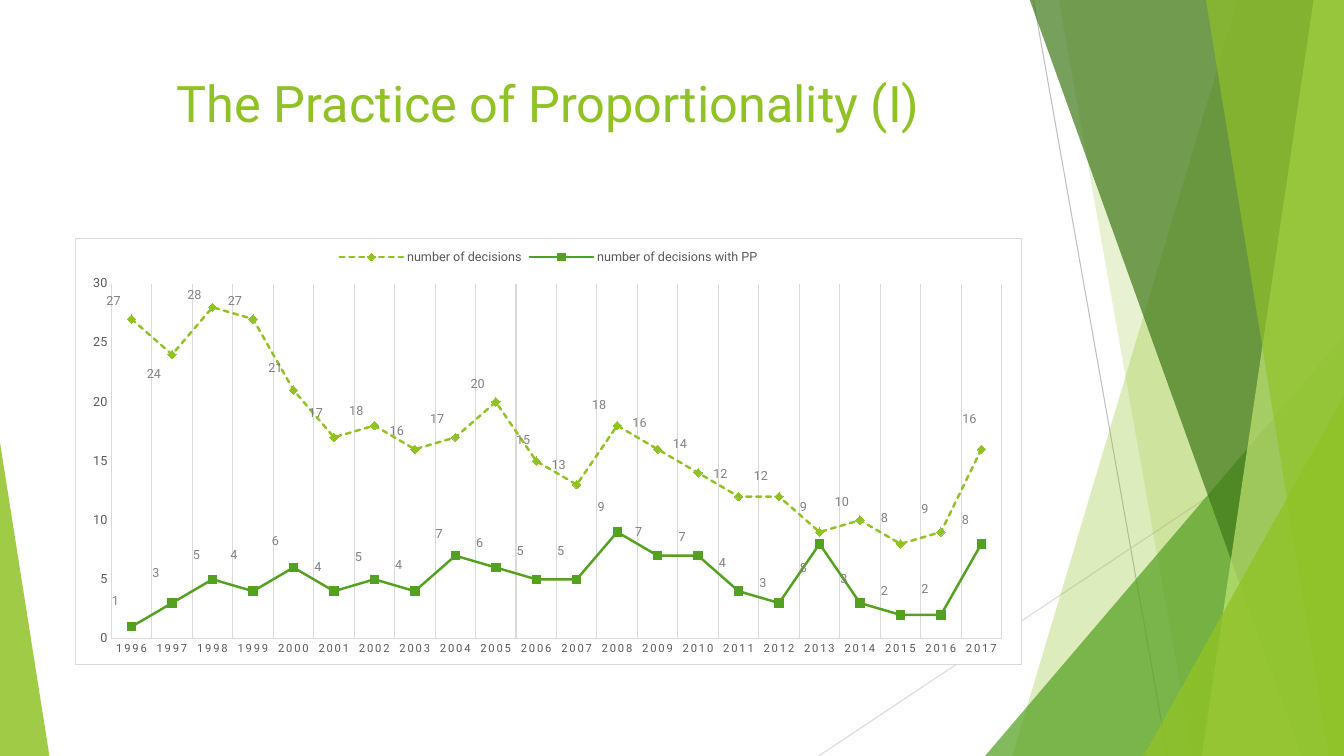
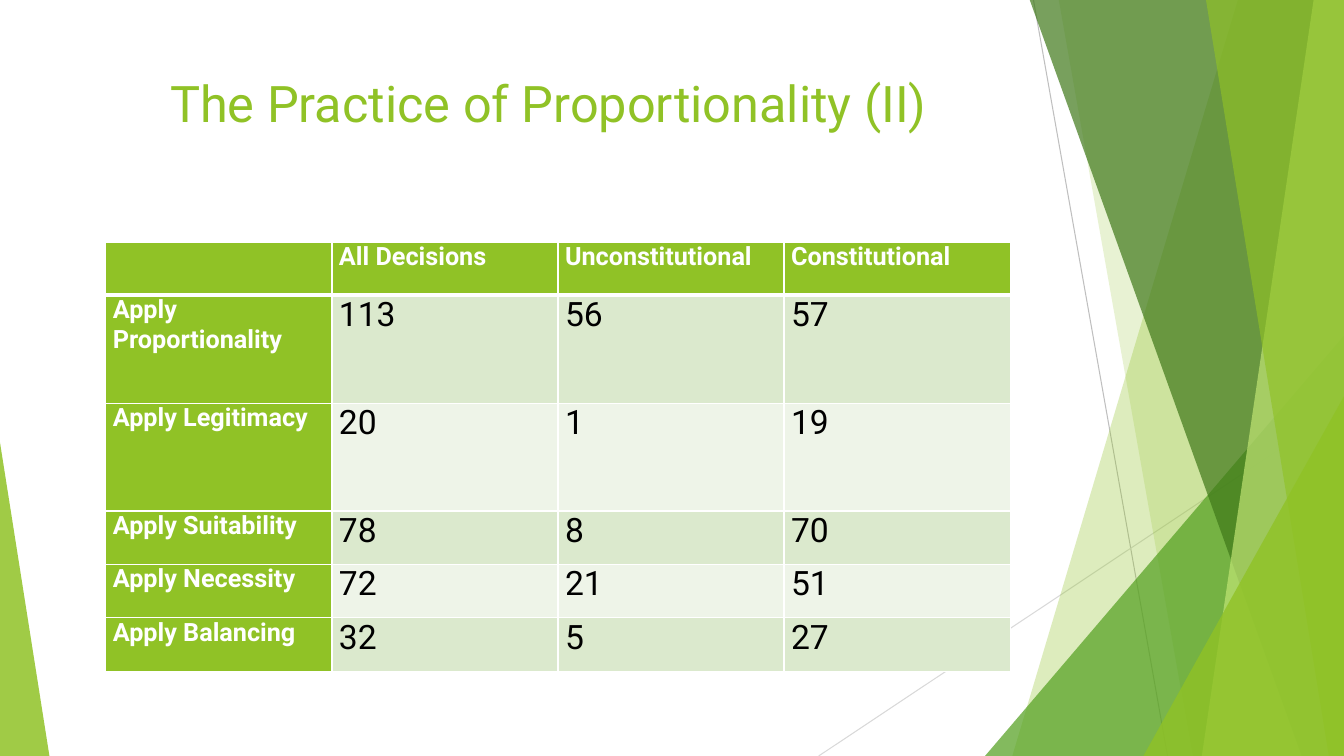
from dataclasses import dataclass
from typing import Any

from lxml.etree import SubElement
from pptx import Presentation
from pptx.chart.chart import Chart
from pptx.chart.data import CategoryChartData
from pptx.dml.color import RGBColor
from pptx.enum.chart import XL_CHART_TYPE, XL_LABEL_POSITION, XL_LEGEND_POSITION, XL_MARKER_STYLE, XL_TICK_MARK
from pptx.enum.dml import MSO_LINE
from pptx.enum.shapes import MSO_CONNECTOR, MSO_SHAPE
from pptx.enum.text import MSO_ANCHOR, MSO_AUTO_SIZE, PP_ALIGN
from pptx.oxml import parse_xml
from pptx.oxml.ns import nsdecls, qn
from pptx.util import Inches, Pt

COLORS = {
    "lime": "90C226", "green": "54A021", "forest": "3F7819", "pale_lime": "C0E474",
    "silver": "BFBFBF", "light_gray": "D9D9D9", "axis_text": "595959", "label_text": "808080",
    "white": "FFFFFF", "black": "000000", "row_tint": "DBE9CD", "row_pale": "EEF4E8",
}
FONT = "Roboto"
PAGE_WIDTH, PAGE_HEIGHT = 13.33, 7.5
TITLE_BOX = {"left": Inches(0.74), "top": Inches(0.67), "width": Inches(9.4), "height": Inches(1.44)}


@dataclass(frozen=True)
class Band:
    """Area from a slanted left edge to the right side of the page."""
    top_x: float
    bottom_x: float
    color: str
    opacity: int


@dataclass(frozen=True)
class Corner:
    """Triangle standing on the bottom of the page; apex 0 is left, 1 is right."""
    left: float
    top: float
    width: float
    apex: int
    color: str
    opacity: int


@dataclass(frozen=True)
class Ray:
    start: tuple[float, float]
    end: tuple[float, float]
    color: str


@dataclass(frozen=True)
class LineSeries:
    """Shifts lead from a point to its label; across_shifts holds the exceptions by index."""
    name: str
    values: list[int]
    color: str
    marker: XL_MARKER_STYLE
    dash: MSO_LINE
    across_shifts: dict[int, float]
    down_shifts: list[float]


RAYS = [
    Ray((10.25, 0), (11.58, PAGE_HEIGHT), "silver"),
    Ray((PAGE_WIDTH, 4.03), (8.12, PAGE_HEIGHT), "light_gray"),
]
FACETS = [
    Band(12.28, 10.04, "lime", 30),
    Band(10.5, 11.83, "lime", 20),
    Corner(9.77, 3.33, 3.56, 1, "green", 72),
    Band(10.21, 12.91, "forest", 70),
    Band(13.03, 11.92, "pale_lime", 70),
    Band(11.96, 13.18, "lime", 65),
    Corner(11.34, 3.93, 1.99, 1, "lime", 80),
    Corner(0, 4.39, 0.49, 0, "lime", 85),
]
YEARS = [str(year) for year in range(1996, 2018)]
SERIES = [
    LineSeries(
        "number of decisions",
        [27, 24, 28, 27, 21, 17, 18, 16, 17, 20, 15, 13, 18, 16, 14, 12, 12, 9, 10, 8, 9, 16],
        "lime", XL_MARKER_STYLE.DIAMOND, MSO_LINE.SQUARE_DOT, {10: -0.13, 21: -0.12},
        [-0.18, 0.2, -0.12, -0.18, -0.22, -0.24, -0.14, -0.18, -0.18, -0.18, -0.21,
         -0.19, -0.2, -0.26, -0.28, -0.22, -0.2, -0.25, -0.18, -0.25, -0.23, -0.3]),
    LineSeries(
        "number of decisions with PP",
        [1, 3, 5, 4, 6, 4, 5, 4, 7, 6, 5, 5, 9, 7, 7, 4, 3, 8, 3, 2, 2, 8],
        "green", XL_MARKER_STYLE.SQUARE, MSO_LINE.SOLID, {3: -0.19, 4: -0.18, 13: -0.19},
        [-0.25, -0.3, -0.24, -0.36, -0.26, -0.24, -0.22, -0.26, -0.21, -0.24, -0.28,
         -0.28, -0.25, -0.23, -0.18, -0.28, -0.2, 0.24, -0.24, -0.23, -0.25, -0.23]),
]
CHART_WIDTH, CHART_HEIGHT = 9.4, 4.24
TABLE_ROWS = [
    ["", "All Decisions", "Unconstitutional", "Constitutional"],
    ["Apply Proportionality", "113", "56", "57"],
    ["Apply Legitimacy", "20", "1", "19"],
    ["Apply Suitability", "78", "8", "70"],
    ["Apply Necessity", "72", "21", "51"],
    ["Apply Balancing", "32", "5", "27"],
]
ROW_HEIGHTS = [0.53, 1.07, 1.07, 0.53, 0.53, 0.53]
CELL_FORMAT = {"margin_left": Inches(0.07), "margin_right": Inches(0.07),
               "margin_top": 0, "margin_bottom": 0, "vertical_anchor": MSO_ANCHOR.TOP}


def rgb(color: str) -> RGBColor:
    return RGBColor.from_string(COLORS[color])


def apply(target: Any, values: dict[str, Any]) -> None:
    for name, value in values.items():
        setattr(target, name, value)


def format_font(font: Any, size: float, color: str, bold: bool = False) -> None:
    apply(font, {"name": FONT, "size": Pt(size), "bold": bold})
    font.color.rgb = rgb(color)


def format_line(line: Any, color: str, width: float = 0.75) -> None:
    line.color.rgb = rgb(color)
    line.width = Pt(width)


def draw_ray(shapes: Any, ray: Ray) -> None:
    line = shapes.add_connector(MSO_CONNECTOR.STRAIGHT, *(Inches(value) for value in ray.start + ray.end))
    format_line(line.line, ray.color)
    SubElement(line.element.spPr, qn("a:effectLst"))


def draw_facet(shapes: Any, facet: Band | Corner) -> None:
    if isinstance(facet, Band):
        outline = shapes.build_freeform(Inches(facet.top_x), Inches(-0.01))
        corners = [(PAGE_WIDTH, -0.01), (PAGE_WIDTH, PAGE_HEIGHT), (facet.bottom_x, PAGE_HEIGHT)]
        outline.add_line_segments([(Inches(x), Inches(y)) for x, y in corners])
        shape = outline.convert_to_shape()
    else:
        shape = shapes.add_shape(MSO_SHAPE.ISOSCELES_TRIANGLE, Inches(facet.left), Inches(facet.top),
                                 Inches(facet.width), Inches(PAGE_HEIGHT - facet.top))
        shape.adjustments[0] = facet.apex
    shape.shadow.inherit = False
    shape.line.fill.background()
    shape.fill.solid()
    shape.fill.fore_color.rgb = rgb(facet.color)
    color = shape.element.spPr.find(qn("a:solidFill"))[0]
    SubElement(color, qn("a:alpha"), val=str(facet.opacity * 1000))


def decorate_layout(layout: Any, page: Any) -> None:
    """Draw the facets on a page and move them to its layout, behind everything."""
    group = page.shapes.add_group_shape()
    for ray in RAYS:
        draw_ray(group.shapes, ray)
    for facet in FACETS:
        draw_facet(group.shapes, facet)
    layout.shapes.element.insert(2, group.element)


def add_page(deck: Any, layout: Any, title: str) -> Any:
    page = deck.slides.add_slide(layout)
    box = page.shapes.title
    apply(box, TITLE_BOX)
    apply(box.text_frame, {"vertical_anchor": MSO_ANCHOR.TOP, "word_wrap": True,
                           "auto_size": MSO_AUTO_SIZE.NONE})
    para = box.text_frame.paragraphs[0]
    para.alignment = PP_ALIGN.CENTER
    span = para.add_run()
    span.text = title
    format_font(span.font, 36, "lime")
    return page


def manual_layout(**values: Any) -> Any:
    parts = "".join(f'<c:{name} val="{value}"/>' for name, value in values.items())
    return parse_xml(f'<c:layout {nsdecls("c")}><c:manualLayout>{parts}</c:manualLayout></c:layout>')


def format_series(line: Any, series: LineSeries) -> None:
    line.smooth = False
    format_line(line.format.line, series.color, 1.75)
    line.format.line.dash_style = series.dash
    apply(line.marker, {"style": series.marker, "size": 6})
    line.marker.format.fill.solid()
    line.marker.format.fill.fore_color.rgb = rgb(series.color)
    format_line(line.marker.format.line, series.color)
    line.data_labels.show_value = True
    for labels in (line.data_labels, *(line.points[i].data_label for i in range(len(series.values)))):
        format_font(labels.font, 9, "label_text")
        labels.position = XL_LABEL_POSITION.CENTER


def shift_labels(chart: Chart) -> None:
    for number, series in enumerate(SERIES, 1):
        labels = chart.element.xpath(f".//c:ser[{number}]//c:dLbl")
        for index, (label, value, down) in enumerate(zip(labels, series.values, series.down_shifts)):
            across = series.across_shifts.get(index, -0.18 if value > 9 else -0.16)
            label.insert(1, manual_layout(x=across / CHART_WIDTH, y=down / CHART_HEIGHT))
    for leader in chart.element.xpath(".//c:showLeaderLines"):
        leader.set("val", "0")


def frame_chart(chart: Chart) -> None:
    """Place the plot area and give the chart its white, thinly outlined background."""
    plot_area = chart.element.xpath(".//c:plotArea")[0]
    for old in plot_area.findall(qn("c:layout")):
        plot_area.remove(old)
    plot_area.insert(0, manual_layout(
        layoutTarget="inner", xMode="edge", yMode="edge", x=0.36 / CHART_WIDTH, y=0.45 / CHART_HEIGHT,
        w=8.84 / CHART_WIDTH, h=3.53 / CHART_HEIGHT))
    chart.element.find(qn("c:txPr")).addprevious(parse_xml(
        f'<c:spPr {nsdecls("c", "a")}><a:solidFill><a:srgbClr val="{COLORS["white"]}"/></a:solidFill>'
        f'<a:ln w="{Pt(0.75)}"><a:solidFill><a:srgbClr val="{COLORS["light_gray"]}"/>'
        '</a:solidFill></a:ln></c:spPr>'))


def add_decisions_chart(page: Any) -> None:
    data = CategoryChartData()
    data.categories = YEARS
    for series in SERIES:
        data.add_series(series.name, series.values)
    chart = page.shapes.add_chart(XL_CHART_TYPE.LINE_MARKERS, Inches(0.74), Inches(2.36),
                                  Inches(CHART_WIDTH), Inches(CHART_HEIGHT), data).chart
    format_font(chart.font, 10, "black")
    apply(chart, {"has_title": False, "has_legend": True})
    apply(chart.legend, {"position": XL_LEGEND_POSITION.TOP, "include_in_layout": False})
    format_font(chart.legend.font, 9, "axis_text")
    chart.plots[0].vary_by_categories = False
    years, counts = chart.category_axis, chart.value_axis
    for axis, size, has_grid in ((years, 8, True), (counts, 9, False)):
        apply(axis, {"has_major_gridlines": has_grid, "major_tick_mark": XL_TICK_MARK.NONE,
                     "minor_tick_mark": XL_TICK_MARK.NONE})
        format_line(axis.format.line, "light_gray")
        format_font(axis.tick_labels.font, size, "axis_text")
    format_line(years.major_gridlines.format.line, "light_gray")
    apply(counts, {"minimum_scale": 0, "maximum_scale": 30, "major_unit": 5})
    chart.element.xpath(".//c:catAx/c:txPr//a:defRPr")[0].set("spc", "120")
    for line, series in zip(chart.plots[0].series, SERIES):
        format_series(line, series)
    for stroke in chart.element.xpath(".//c:ser/c:spPr/a:ln"):
        stroke.set("cap", "rnd")
    shift_labels(chart)
    frame_chart(chart)


def add_borders(cell: Any, widths: dict[str, float]) -> None:
    properties = cell._tc.get_or_add_tcPr()
    for index, (side, width) in enumerate(widths.items()):
        properties.insert(index, parse_xml(
            f'<a:ln{side} {nsdecls("a")} w="{Pt(width)}"><a:solidFill>'
            f'<a:srgbClr val="{COLORS["white"]}"/></a:solidFill></a:ln{side}>'))


def add_decisions_table(page: Any) -> None:
    table = page.shapes.add_table(len(TABLE_ROWS), len(TABLE_ROWS[0]), Inches(1.05), Inches(2.4),
                                  Inches(8.97), Inches(sum(ROW_HEIGHTS))).table
    for row, (texts, height) in enumerate(zip(TABLE_ROWS, ROW_HEIGHTS)):
        table.rows[row].height = Inches(height)
        for column, text in enumerate(texts):
            cell = table.cell(row, column)
            is_heading = row == 0 or column == 0
            apply(cell, CELL_FORMAT)
            cell.fill.solid()
            tint = "row_tint" if row % 2 else "row_pale"
            cell.fill.fore_color.rgb = rgb("lime" if is_heading else tint)
            add_borders(cell, {"L": 1, "R": 1, "T": 3 if row == 1 else 1, "B": 3 if row == 0 else 1})
            if text:
                span = cell.text_frame.paragraphs[0].add_run()
                span.text = text
                size, color = (18, "white") if is_heading else (24, "black")
                format_font(span.font, size, color, is_heading)


def main() -> None:
    deck = Presentation()
    apply(deck, {"slide_width": Inches(PAGE_WIDTH), "slide_height": Inches(PAGE_HEIGHT)})
    layout = deck.slide_layouts.get_by_name("Title Only")
    chart_page = add_page(deck, layout, "The Practice of Proportionality (I)")
    decorate_layout(layout, chart_page)
    add_decisions_chart(chart_page)
    add_decisions_table(add_page(deck, layout, "The Practice of Proportionality (II)"))
    deck.save("out.pptx")


if __name__ == "__main__":
    main()
